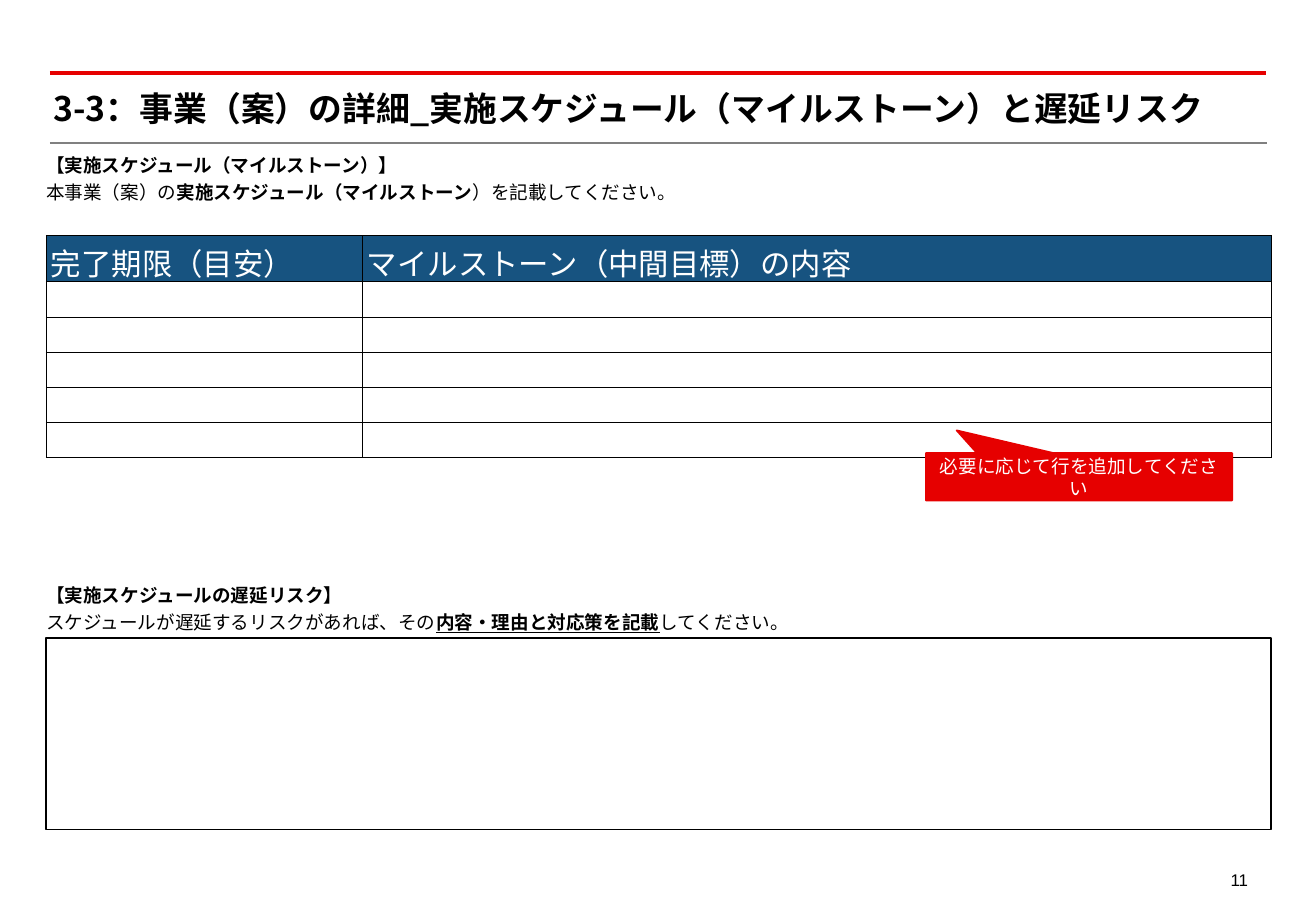
from dataclasses import dataclass

from lxml.etree import SubElement
from pptx import Presentation
from pptx.dml.color import RGBColor as Rgb
from pptx.enum.shapes import MSO_CONNECTOR as Connector, MSO_SHAPE as Shape
from pptx.enum.text import MSO_ANCHOR as Anchor, PP_ALIGN as Align
from pptx.oxml.ns import qn
from pptx.util import Pt


@dataclass(frozen=True)
class Theme:
    black: Rgb = Rgb.from_string("000000")
    white: Rgb = Rgb.from_string("FFFFFF")
    red: Rgb = Rgb.from_string("E60000")
    gray: Rgb = Rgb.from_string("808080")
    navy: Rgb = Rgb.from_string("175380")
    font: str = "Noto Sans CJK JP"
    number_font: str = "Arial"
    title_size: float = 20
    body_size: float = 11
    header_size: float = 10.5
    number_size: float = 10


theme = Theme()
PX = 9144  # 100 px to the inch
LEFT, WIDTH = 38, 1008


def style(para, size, color, bold=None, align=Align.LEFT, spacing=1.0, name=theme.font):
    """Set paragraph layout and font, for Latin and East Asian letters alike."""
    para.alignment = align
    para.line_spacing = spacing
    font = para.font
    font.size, font.bold, font.name = Pt(size), bold, name
    font.color.rgb = color
    SubElement(para._p.pPr.find(qn("a:defRPr")), qn("a:ea"), typeface=name)


def add_text_box(left, top, width, height, inset=0):
    frame = slide.shapes.add_textbox(left * PX, top * PX, width * PX, height * PX).text_frame
    frame.word_wrap = True
    frame.margin_left = frame.margin_right = inset * PX
    frame.margin_top = frame.margin_bottom = inset * PX // 2
    return frame


deck = Presentation()
deck.slide_width, deck.slide_height = 1083 * PX, 750 * PX
slide = deck.slides.add_slide(deck.slide_layouts[6])

# Page number and title rules
number = add_text_box(993, 708, 44, 28, inset=10)
number.word_wrap = False
number.text = "11"
style(number.paragraphs[0], theme.number_size, theme.black, align=Align.RIGHT,
      spacing=1.2, name=theme.number_font)

for right, y, color, weight in [(1042, 60, theme.red, 2), (1043, 118, theme.gray, 1.25)]:
    rule = slide.shapes.add_connector(Connector.STRAIGHT, 41 * PX, y * PX, right * PX, y * PX)
    rule.line.color.rgb = color
    rule.line.width = Pt(weight)
    SubElement(rule._element.spPr, qn("a:effectLst"))

title = add_text_box(44, 72, 991, 34)
title.vertical_anchor = Anchor.MIDDLE
title.text = "3-3：事業（案）の詳細_実施スケジュール（マイルストーン）と遅延リスク"
style(title.paragraphs[0], theme.title_size, theme.black, bold=True)

# Section headings, each with an instruction: before, emphasis, after, underlined
sections = [
    (123, "【実施スケジュール（マイルストーン）】",
     "本事業（案）の", "実施スケジュール（マイルストーン", "）を記載してください。", False),
    (477, "【実施スケジュールの遅延リスク】",
     "スケジュールが遅延するリスクがあれば、その", "内容・理由と対応策を記載",
     "してください。", True),
]
for top, heading, before, emphasis, after, underlined in sections:
    frame = add_text_box(LEFT, top, WIDTH, 42)
    frame.text = heading
    style(frame.paragraphs[0], theme.body_size, theme.black, bold=True, spacing=1.2)
    para = frame.add_paragraph()
    style(para, theme.body_size, theme.black, spacing=1.2)
    for text in (before, emphasis, after):
        span = para.add_run()
        span.text = text
        if text == emphasis:
            span.font.bold = True
            span.font.underline = underlined

# Milestone table
headers = ["完了期限（目安）", "マイルストーン（中間目標）の内容"]
row_count, row_height = 6, 29
table = slide.shapes.add_table(row_count, len(headers), LEFT * PX, 194 * PX,
                               WIDTH * PX, row_count * row_height * PX).table
for column, width in zip(table.columns, (260, 748)):
    column.width = width * PX
for row_index, row in enumerate(table.rows):
    row.height = row_height * PX
    for cell, header in zip(row.cells, headers):
        cell.margin_left = cell.margin_right = 4 * PX
        cell.margin_top = cell.margin_bottom = 4 * PX
        cell.vertical_anchor = Anchor.MIDDLE
        for side in ("lnL", "lnR", "lnT", "lnB"):
            border = SubElement(cell._tc.get_or_add_tcPr(), qn(f"a:{side}"), w=str(Pt(0.5)))
            fill = SubElement(border, qn("a:solidFill"))
            SubElement(fill, qn("a:srgbClr"), val=str(theme.black))
        para = cell.text_frame.paragraphs[0]
        if row_index == 0:
            cell.fill.solid()
            cell.fill.fore_color.rgb = theme.navy
            cell.text = header
            style(para, theme.header_size, theme.white, bold=True,
                  align=Align.CENTER, spacing=1.2)
        else:
            cell.fill.background()
            SubElement(para._p, qn("a:endParaRPr"), sz=str(int(theme.header_size * 100)))

# Answer box for delay risks
answer = slide.shapes.add_shape(Shape.RECTANGLE, LEFT * PX, 525 * PX, WIDTH * PX, 158 * PX)
answer.shadow.inherit = False
answer.fill.background()
answer.line.color.rgb = theme.black
answer.line.width = Pt(1)

# Callout pointing at the last table row
callout = slide.shapes.add_shape(Shape.RECTANGULAR_CALLOUT, 762 * PX, 373 * PX, 252 * PX, 39 * PX)
callout.shadow.inherit = False
callout.adjustments[0], callout.adjustments[1] = -0.4, -0.98
callout.fill.solid()
callout.fill.fore_color.rgb = theme.red
callout.line.color.rgb = theme.red
callout.line.width = Pt(1)
frame = callout.text_frame
frame.word_wrap = True
frame.vertical_anchor = Anchor.MIDDLE
frame.margin_left = frame.margin_right = frame.margin_top = frame.margin_bottom = 4 * PX
frame.text = "必要に応じて行を追加してください"
style(frame.paragraphs[0], theme.body_size, theme.white, align=Align.CENTER)

deck.save("out.pptx")
